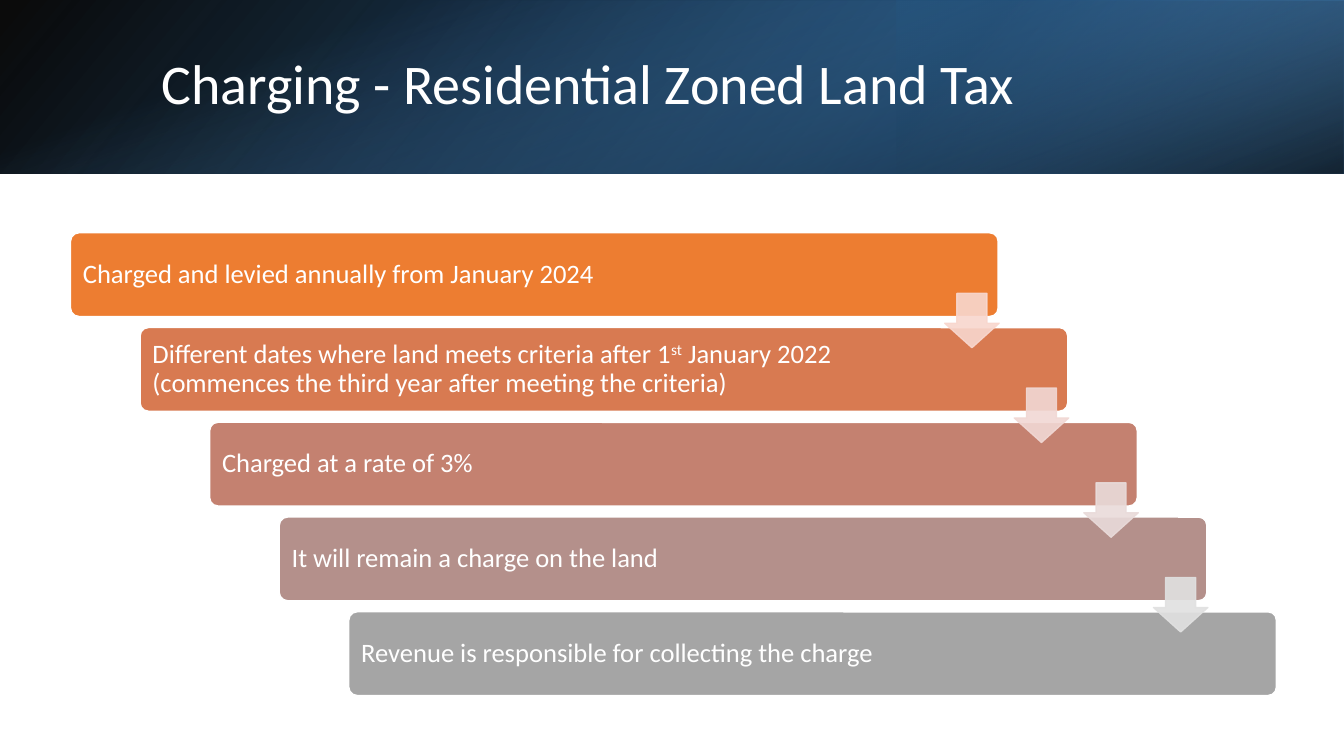
"""Build the slide on charging the Residential Zoned Land Tax."""
from dataclasses import dataclass

from lxml import etree
from pptx import Presentation
from pptx.dml.color import RGBColor
from pptx.enum.shapes import MSO_SHAPE
from pptx.enum.text import MSO_ANCHOR, PP_ALIGN
from pptx.oxml.ns import qn
from pptx.util import Pt

RECTANGLE = MSO_SHAPE.RECTANGLE
ROUNDED = MSO_SHAPE.ROUNDED_RECTANGLE
DOWN_ARROW = MSO_SHAPE.DOWN_ARROW
MIDDLE = MSO_ANCHOR.MIDDLE
LEFT = PP_ALIGN.LEFT

EMU_PER_PX = 9144
FONT = "Calibri"
TITLE_ONLY = 5
STEP_RIGHT, STEP_DOWN = 69, 94
COLORS = {
    "white": "FFFFFF", "black": "000000",
    "blue": "2E75B6", "navy": "1F4E79", "sky": "5B9BD5",
    "step 1": "ED7D31", "step 2": "D87A51", "step 3": "C48170",
    "step 4": "B4908B", "step 5": "A5A5A5",
    "arrow 1": "F8D7CE", "arrow 2": "F1D8D4",
    "arrow 3": "E9DBDA", "arrow 4": "E1E1E1",
}


@dataclass(frozen=True)
class Box:
    left: int
    top: int
    width: int
    height: int

    def emu(self) -> list[int]:
        return [value * EMU_PER_PX
                for value in (self.left, self.top, self.width, self.height)]

    def stepped(self, index: int) -> "Box":
        return Box(self.left + index * STEP_RIGHT, self.top + index * STEP_DOWN,
                   self.width, self.height)


@dataclass(frozen=True)
class Stop:
    position: int
    color: str
    opacity: int = 100


@dataclass(frozen=True)
class Band:
    box: Box
    stops: tuple[Stop, ...]
    angle: int
    rotation: int = 0
    flipped: bool = False


@dataclass(frozen=True)
class Step:
    """A bar whose text pieces alternate between normal and superscript."""
    pieces: tuple[str, ...]


BANDS = (
    Band(Box(0, 0, 1333, 172),
         (Stop(0, "black", 96), Stop(100, "blue")), 140, flipped=True),
    Band(Box(889, 0, 444, 172),
         (Stop(19, "navy", 68), Stop(100, "sky", 79)), 320, 180, True),
    Band(Box(580, -580, 172, 1333),
         (Stop(23, "sky", 0), Stop(99, "black", 74)), 340, 90),
)
TITLE_BOX = Box(150, 38, 1098, 96)
FIRST_BAR = Box(70, 231, 920, 83)
FIRST_ARROW = Box(937, 291, 54, 54)
STEPS = (
    Step(("Charged and levied annually from January 2024",)),
    Step(("Different dates where land meets criteria after 1", "st",
          " January 2022 (commences the third year after meeting the criteria)")),
    Step(("Charged at a rate of 3%",)),
    Step(("It will remain a charge on the land",)),
    Step(("Revenue is responsible for collecting the charge",)),
)


def rgb(name: str) -> RGBColor:
    return RGBColor.from_string(COLORS[name])


def set_opacity(color_element, percent: int) -> None:
    etree.SubElement(color_element, qn("a:alpha"), val=str(percent * 1000))


def add_plain_shape(slide, kind, box: Box):
    shape = slide.shapes.add_shape(kind, *box.emu())
    shape.shadow.inherit = False
    return shape


def paint(shape, fill: str, line: str) -> None:
    shape.fill.solid()
    shape.fill.fore_color.rgb = rgb(fill)
    shape.line.color.rgb = rgb(line)
    shape.line.width = Pt(1)


def format_run(run, size: int) -> None:
    run.font.name = FONT
    run.font.size = Pt(size)
    run.font.color.rgb = rgb("white")


def add_band(slide, band: Band) -> None:
    shape = add_plain_shape(slide, RECTANGLE, band.box)
    shape.line.fill.background()
    shape.rotation = band.rotation
    properties = shape._element.spPr
    if band.flipped:
        properties.find(qn("a:xfrm")).set("flipH", "1")
    gradient = etree.Element(qn("a:gradFill"))
    stop_list = etree.SubElement(gradient, qn("a:gsLst"))
    for stop in band.stops:
        entry = etree.SubElement(stop_list, qn("a:gs"), pos=str(stop.position * 1000))
        color = etree.SubElement(entry, qn("a:srgbClr"), val=COLORS[stop.color])
        set_opacity(color, stop.opacity)
    etree.SubElement(gradient, qn("a:lin"), ang=str(band.angle * 60000), scaled="0")
    properties.find(qn("a:prstGeom")).addnext(gradient)


def place_title(slide, text: str) -> None:
    title = slide.shapes.title
    title.left, title.top, title.width, title.height = TITLE_BOX.emu()
    title.text_frame.text = text
    title.text_frame.vertical_anchor = MIDDLE
    paragraph = title.text_frame.paragraphs[0]
    paragraph.alignment = LEFT
    paragraph.line_spacing = 0.9
    format_run(paragraph.runs[0], 40)
    title._element.getparent().append(title._element)


def add_step(slide, step: Step, index: int) -> None:
    bar = add_plain_shape(slide, ROUNDED, FIRST_BAR.stepped(index))
    bar.adjustments[0] = 0.1
    paint(bar, f"step {index + 1}", "white")
    frame = bar.text_frame
    frame.word_wrap = True
    frame.vertical_anchor = MIDDLE
    frame.margin_left = 10 * EMU_PER_PX
    frame.margin_right = 132 * EMU_PER_PX
    paragraph = frame.paragraphs[0]
    paragraph.alignment = LEFT
    paragraph.line_spacing = 0.9
    for position, piece in enumerate(step.pieces):
        run = paragraph.add_run()
        run.text = piece
        format_run(run, 19)
        if position % 2:
            run.font._element.set("baseline", "30000")


def add_arrow(slide, index: int) -> None:
    arrow = add_plain_shape(slide, DOWN_ARROW, FIRST_ARROW.stepped(index))
    arrow.adjustments[0] = 0.55
    arrow.adjustments[1] = 0.45
    color = f"arrow {index + 1}"
    paint(arrow, color, color)
    for color_element in list(arrow._element.spPr.iter(qn("a:srgbClr"))):
        set_opacity(color_element, 90)


def main() -> None:
    presentation = Presentation()
    presentation.slide_width = 1333 * EMU_PER_PX
    presentation.slide_height = 750 * EMU_PER_PX
    slide = presentation.slides.add_slide(presentation.slide_layouts[TITLE_ONLY])
    for band in BANDS:
        add_band(slide, band)
    place_title(slide, "Charging - Residential Zoned Land Tax")
    for index, step in enumerate(STEPS):
        add_step(slide, step, index)
    for index in range(len(STEPS) - 1):
        add_arrow(slide, index)
    presentation.save("out.pptx")


if __name__ == "__main__":
    main()
